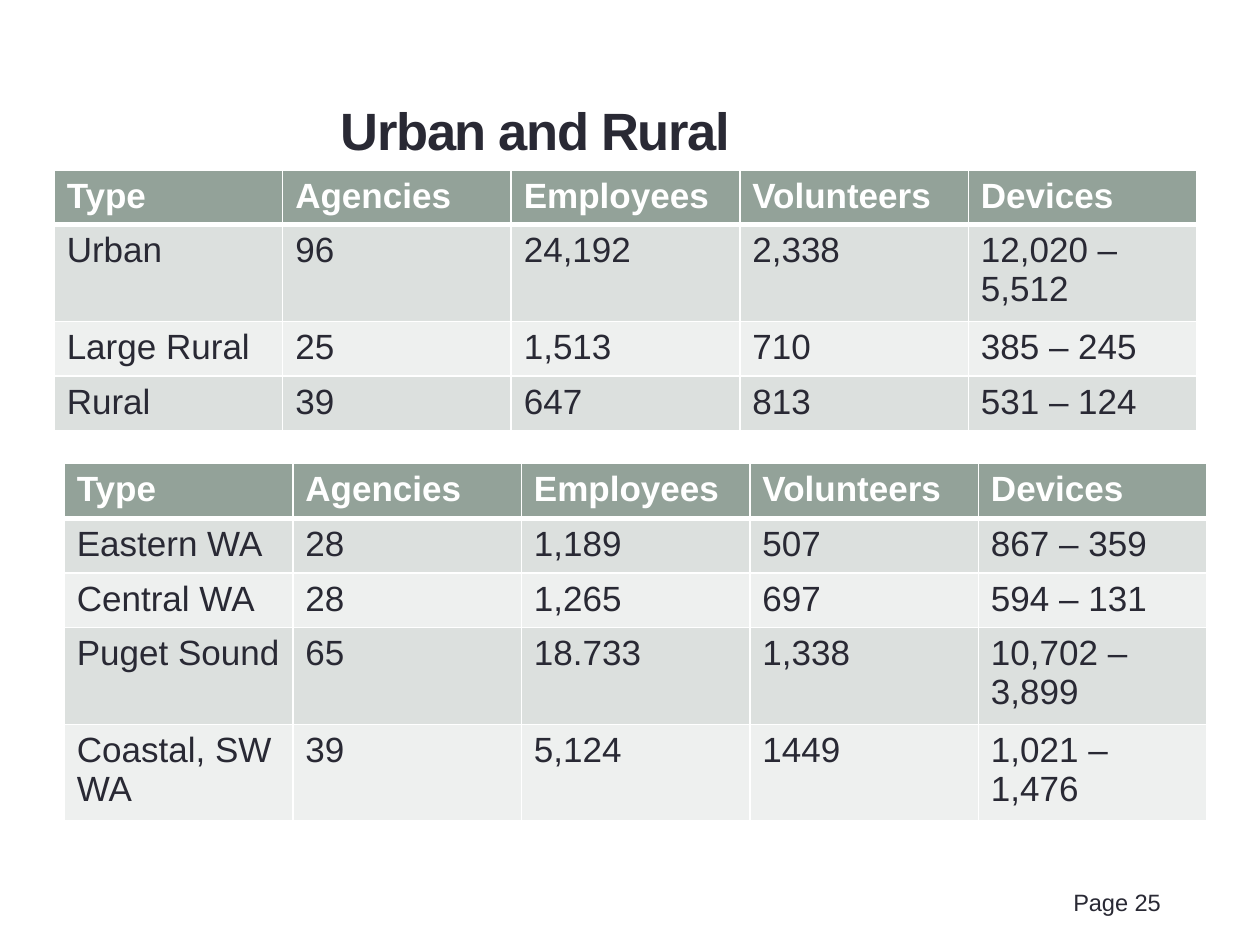
from lxml import etree
from pptx import Presentation
from pptx import util as u
from pptx.dml.color import RGBColor
from pptx.enum import text as t
from pptx.oxml import ns

FONT = "Arial"
INK = RGBColor(0x29, 0x29, 0x34)
WHITE = RGBColor(0xFF, 0xFF, 0xFF)
HEADER = RGBColor(0x93, 0xA2, 0x99)
BANDS = (RGBColor(0xDC, 0xE0, 0xDE), RGBColor(0xEE, 0xF0, 0xEF))

COLUMNS = ("Type", "Agencies", "Employees", "Volunteers", "Devices")
COLUMN_WIDTH = 1.814
ROW_HEIGHT = 0.41
BY_DENSITY = (
    ("Urban", "96", "24,192", "2,338", "12,020 – 5,512"),
    ("Large Rural", "25", "1,513", "710", "385 – 245"),
    ("Rural", "39", "647", "813", "531 – 124"),
)
BY_REGION = (
    ("Eastern WA", "28", "1,189", "507", "867 – 359"),
    ("Central WA", "28", "1,265", "697", "594 – 131"),
    ("Puget Sound", "65", "18.733", "1,338", "10,702 – 3,899"),
    ("Coastal, SW WA", "39", "5,124", "1449", "1,021 – 1,476"),
)


def write_text(frame, content, size=20, color=INK, bold=False, align=None, spacing=None):
    """Write one formatted run into a text frame."""
    paragraph = frame.paragraphs[0]
    paragraph.alignment = align
    run = paragraph.add_run()
    run.text = content
    run.font.name = FONT
    run.font.size = u.Pt(size)
    run.font.bold = bold
    run.font.color.rgb = color
    if spacing is not None:
        run.font._element.set("spc", str(round(spacing * 100)))


def set_borders(cell, top=1, bottom=1):
    """Draw white borders around a cell, with widths in points."""
    properties = cell._tc.get_or_add_tcPr()
    for side, width in (("L", 1), ("R", 1), ("T", top), ("B", bottom)):
        line = etree.SubElement(properties, ns.qn(f"a:ln{side}"), w=str(u.Pt(width)))
        fill = etree.SubElement(line, ns.qn("a:solidFill"))
        etree.SubElement(fill, ns.qn("a:srgbClr"), val=str(WHITE))


def add_title(slide, content):
    """Place and format the slide title."""
    title = slide.shapes.title
    title.left, title.top = u.Inches(1.22), u.Inches(0.7)
    title.width, title.height = u.Inches(6.06), u.Inches(0.65)
    title.text_frame.vertical_anchor = t.MSO_ANCHOR.MIDDLE
    write_text(title.text_frame, content, size=30, bold=True,
               align=t.PP_ALIGN.CENTER, spacing=-0.8)


def add_banded_table(slide, left, top, records):
    """Add a table with a header row and alternating row fills."""
    rows = (COLUMNS, *records)
    table = slide.shapes.add_table(
        len(rows), len(COLUMNS), u.Inches(left), u.Inches(top),
        u.Inches(COLUMN_WIDTH * len(COLUMNS)), u.Inches(ROW_HEIGHT * len(rows))).table
    for column in table.columns:
        column.width = u.Inches(COLUMN_WIDTH)
    for row_index, row in enumerate(rows):
        table.rows[row_index].height = u.Inches(ROW_HEIGHT)
        is_header = row_index == 0
        for column_index, content in enumerate(row):
            cell = table.cell(row_index, column_index)
            set_borders(cell, top=3 if row_index == 1 else 1, bottom=3 if is_header else 1)
            cell.fill.solid()
            cell.fill.fore_color.rgb = HEADER if is_header else BANDS[(row_index - 1) % 2]
            write_text(cell.text_frame, content, color=WHITE if is_header else INK,
                       bold=is_header)


def add_page_label(slide, content):
    """Add the page label at the bottom right."""
    box = slide.shapes.add_textbox(u.Inches(8.42), u.Inches(7), u.Inches(1.26), u.Inches(0.37))
    box.text_frame.word_wrap = True
    write_text(box.text_frame, content, size=13.5)


def main():
    """Build and save the slide."""
    presentation = Presentation()
    presentation.slide_width, presentation.slide_height = u.Inches(10), u.Inches(7.5)
    slide = presentation.slides.add_slide(presentation.slide_layouts[5])
    add_page_label(slide, "Page 25")
    add_title(slide, "Urban and Rural")
    add_banded_table(slide, 0.43, 1.35, BY_DENSITY)
    add_banded_table(slide, 0.51, 3.68, BY_REGION)
    presentation.save("out.pptx")


if __name__ == "__main__":
    main()
